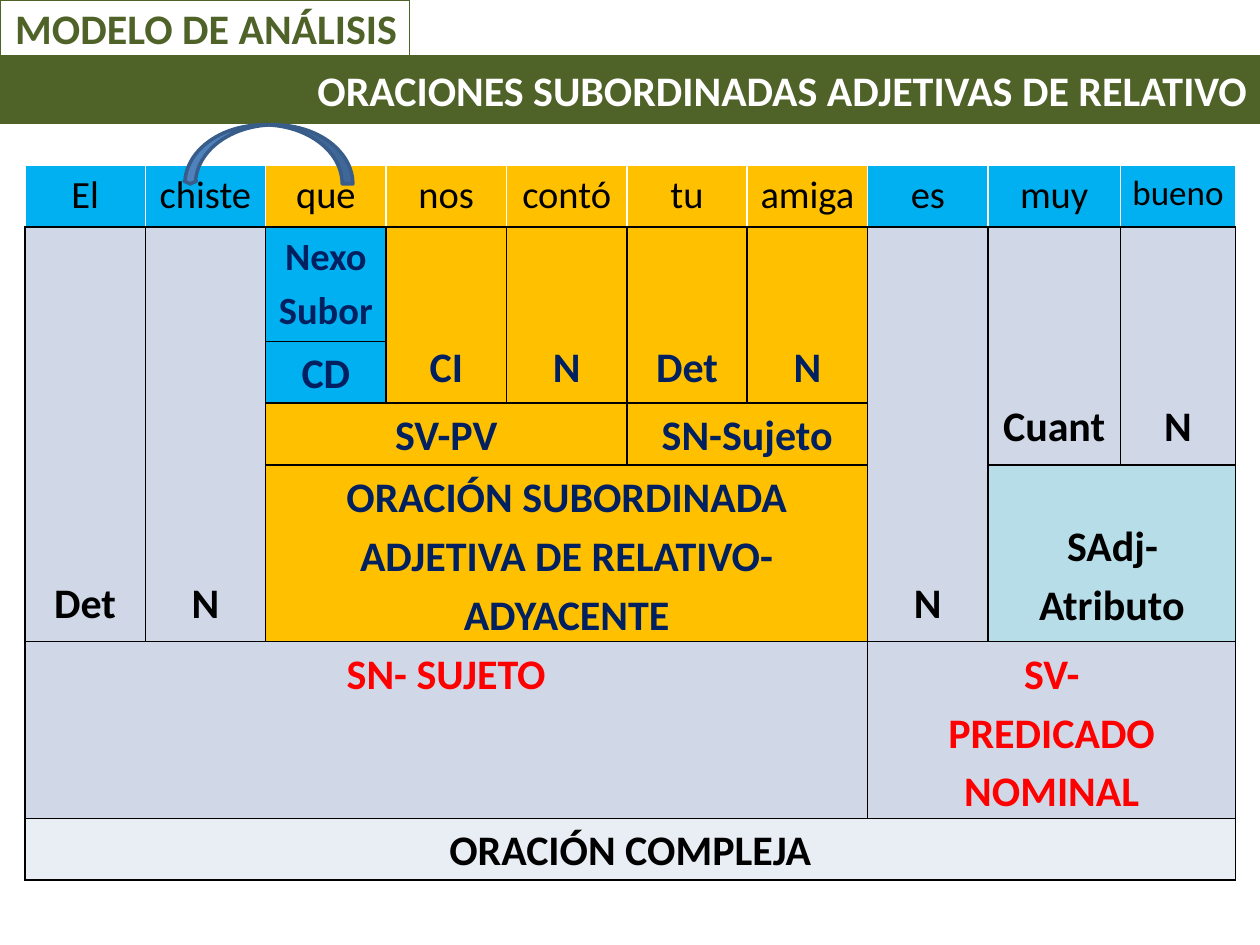
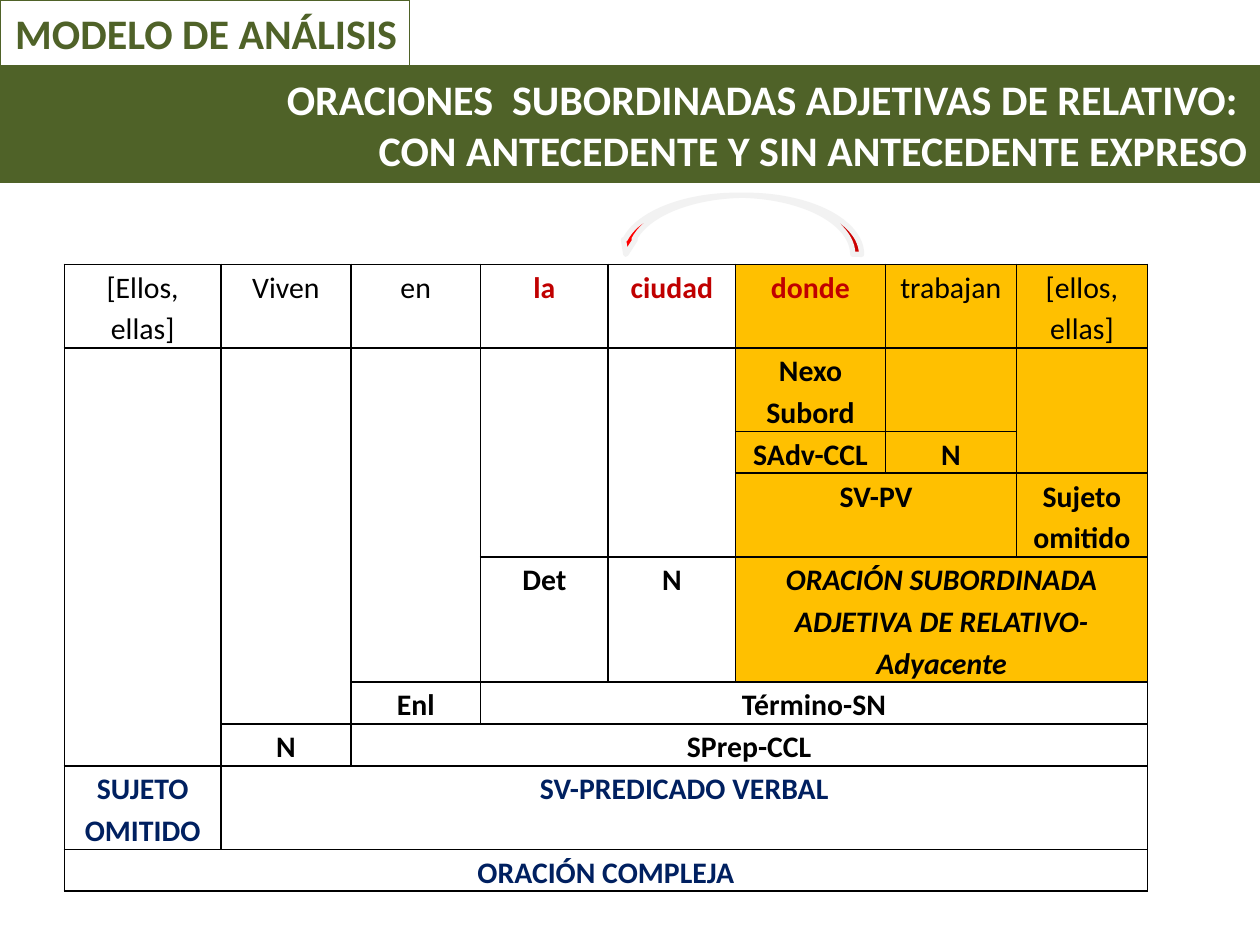
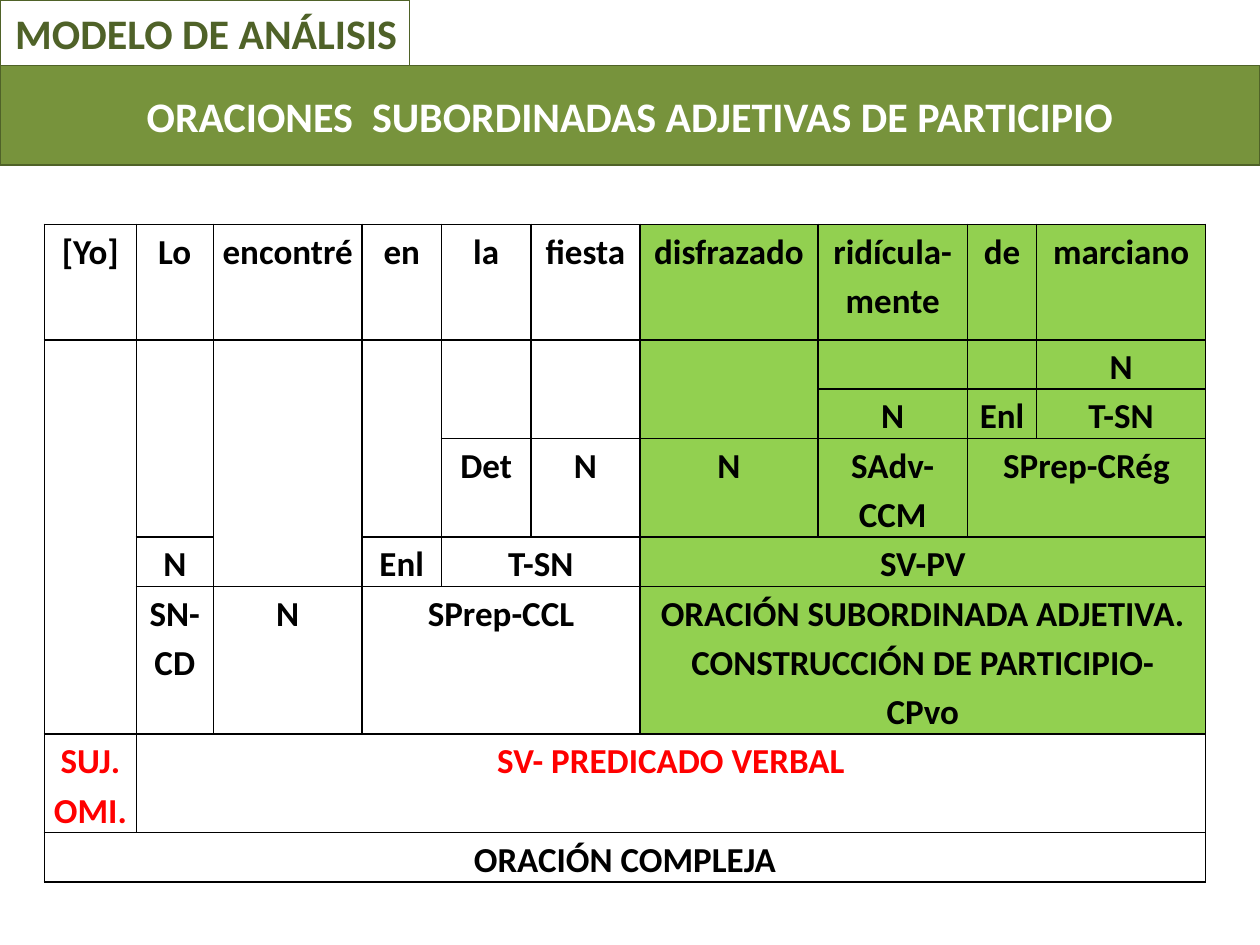
from dataclasses import dataclass
from functools import partial

from lxml.etree import SubElement
from pptx import Presentation
from pptx.dml.color import RGBColor
from pptx.enum.shapes import MSO_SHAPE as Preset
from pptx.enum.text import MSO_ANCHOR as Anchor, MSO_AUTO_SIZE as AutoSize, PP_ALIGN as Align
from pptx.oxml.ns import qn
from pptx.util import Pt

COLORS = {
    "white": "FFFFFF", "black": "000000", "moss": "4F6228", "olive": "77933C",
    "sky": "00B0F0", "amber": "FFC000", "lime": "92D050", "mist": "D0D8E8",
    "pale": "E9EDF4", "aqua": "B7DEE8", "navy": "002060", "red": "FF0000",
    "crimson": "C00000", "blue": "4F81BD", "steel": "385D8A", "silver": "F2F2F2",
}
FONT = "Calibri"
WIDTH, HEIGHT = 720, 540
LABEL_WIDTH = 234


@dataclass
class Cell:
    """One box of an analysis table; cells flow into the next free column."""
    text: str = ""
    across: int = 1
    down: int = 1
    fill: str = ""
    color: str = "black"
    size: float = 0
    bold: bool = True
    italic: bool = False
    drop: float = 0
    edge: str = "black"


def rgb(name):
    return RGBColor.from_string(COLORS[name])


class Deck:
    def __init__(self):
        self.deck = Presentation()
        self.deck.slide_width, self.deck.slide_height = Pt(WIDTH), Pt(HEIGHT)
        self.page = None

    def new_page(self, title, top, height, fill="moss", align=Align.RIGHT):
        """Start a slide with its title band and the label above it."""
        self.page = self.deck.slides.add_slide(self.deck.slide_layouts[5])
        band = self.page.shapes.title
        band.left, band.top, band.width, band.height = Pt(0), Pt(top), Pt(WIDTH), Pt(height)
        self.paint(band, fill, "moss", 0.75)
        self.band_text(band, title, "white", align)
        label = self.shape(Preset.RECTANGLE, 0, 0, LABEL_WIDTH, top, "white", "moss", 0.75)
        self.band_text(label, "MODELO DE ANÁLISIS", "moss", Align.RIGHT)

    def paint(self, shape, fill, line, weight):
        shape.fill.solid()
        shape.fill.fore_color.rgb = rgb(fill)
        shape.line.color.rgb = rgb(line)
        shape.line.width = Pt(weight)

    def shape(self, preset, left, top, width, height, fill, line, weight):
        shape = self.page.shapes.add_shape(preset, Pt(left), Pt(top), Pt(width), Pt(height))
        shape.shadow.inherit = False
        self.paint(shape, fill, line, weight)
        return shape

    def arc(self, preset, left, top, width, height, fill, line, weight, bends):
        arc = self.shape(preset, left, top, width, height, fill, line, weight)
        for index, bend in enumerate(bends):
            arc.adjustments[index] = bend
        return arc

    def band_text(self, shape, text, color, align):
        frame = shape.text_frame
        frame.auto_size = AutoSize.NONE
        frame.word_wrap = True
        frame.vertical_anchor = Anchor.MIDDLE
        frame.margin_left = frame.margin_right = Pt(7.2)
        frame.margin_top = frame.margin_bottom = Pt(3.6)
        self.set_text(frame, text, 24, color, align)

    def set_text(self, frame, text, size, color, align, bold=True, italic=False, spacing=None):
        frame.text = text
        for para in frame.paragraphs:
            para.alignment = align
            para.line_spacing = spacing
            font = para.font
            font.name, font.size, font.bold, font.italic = FONT, Pt(size), bold, italic
            font.color.rgb = rgb(color)

    def table(self, left, top, columns, heights, rows, size, inset):
        frame = self.page.shapes.add_table(
            len(heights), len(columns), Pt(left), Pt(top), Pt(sum(columns)), Pt(sum(heights)))
        table = frame.table
        table.first_row = table.horz_banding = False
        for column, width in zip(table.columns, columns):
            column.width = Pt(width)
        for row, height in zip(table.rows, heights):
            row.height = Pt(height)
        taken = set()
        for r, row in enumerate(rows):
            c = 0
            for cell in row:
                while (r, c) in taken:
                    c += 1
                covered = [(y, x) for y in range(r, r + cell.down)
                           for x in range(c, c + cell.across)]
                taken.update(covered)
                for y, x in covered:
                    text = cell.text if (y, x) == (r, c) else ""
                    self.fill_cell(table.cell(y, x), cell, text, cell.size or size, inset)
                if len(covered) > 1:
                    table.cell(r, c).merge(table.cell(*covered[-1]))

    def fill_cell(self, box, cell, text, size, inset):
        box.margin_left = box.margin_right = Pt(inset)
        box.margin_top, box.margin_bottom = Pt(cell.drop if text else 0), Pt(0)
        if cell.fill:
            box.fill.solid()
            box.fill.fore_color.rgb = rgb(cell.fill)
        else:
            box.fill.background()
        self.set_text(box.text_frame, text, size, cell.color, Align.CENTER,
                      cell.bold, cell.italic, 1.15)
        # Borders come before the fill in the cell properties
        properties = box._tc.get_or_add_tcPr()
        for index, side in enumerate(("lnL", "lnR", "lnT", "lnB")):
            line = SubElement(properties, qn(f"a:{side}"), w=str(Pt(1)))
            color = "black" if side == "lnB" else cell.edge
            SubElement(SubElement(line, qn("a:solidFill")), qn("a:srgbClr"), val=COLORS[color])
            properties.insert(index, line)


def low(lines):
    """Top inset that leaves one 20 pt line and some 24 pt lines free."""
    return 28 + 33.7 * lines


def relative_clause(deck):
    deck.new_page("ORACIONES SUBORDINADAS ADJETIVAS DE RELATIVO", 31.7, 38.9)
    word = partial(Cell, fill="sky", size=22, bold=False, edge="white")
    main_part = partial(Cell, fill="mist")
    clause = partial(Cell, fill="amber", color="navy")
    link = partial(Cell, fill="sky", color="navy")
    rows = [
        [word("El"), word("chiste"),
         *(word(text, fill="amber") for text in ("que", "nos", "contó", "tu", "amiga")),
         word("es"), word("muy"), word("bueno", size=20)],
        [main_part("Det", down=4, drop=low(5)), main_part("N", down=4, drop=low(5)),
         link("Nexo\nSubor", size=22),
         *(clause(text, down=2, drop=low(1)) for text in ("CI", "N", "Det", "N")),
         main_part("N", down=4, drop=low(5)),
         main_part("Cuant", down=3, drop=low(2)), main_part("N", down=3, drop=low(2))],
        [link("CD")],
        [clause("SV-PV", across=3), clause("SN-Sujeto", across=2)],
        [clause("ORACIÓN SUBORDINADA ADJETIVA DE RELATIVO-\nADYACENTE", across=5),
         Cell("SAdj-Atributo", across=2, fill="aqua", drop=low(0))],
        [main_part("SN- SUJETO", across=7, color="red"),
         main_part("SV-\nPREDICADO NOMINAL", across=3, color="red")],
        [Cell("ORACIÓN COMPLEJA", across=10, fill="pale")],
    ]
    deck.table(14.2, 94.5, [68.8] * 8 + [75.6, 66],
               [35.3, 65.3, 35.3, 35.3, 101, 101, 35.3], rows, 24, 5)
    arc = deck.arc(Preset.CURVED_UP_ARROW, 105.1, 71.3, 96.5, 33.8,
                   "blue", "steel", 2, (0.18, 0.21, 0.05))
    arc.rotation = 180


def antecedent(deck):
    deck.new_page("ORACIONES  SUBORDINADAS ADJETIVAS DE RELATIVO: \n"
                  "CON ANTECEDENTE Y SIN ANTECEDENTE EXPRESO", 37.5, 67)
    word = partial(Cell, bold=False)
    key = partial(Cell, color="crimson")
    clause = partial(Cell, fill="amber")
    rows = [
        [word("[Ellos, ellas]"), word("Viven"), word("en"), key("la"), key("ciudad"),
         key("donde", fill="amber"), word("trabajan", fill="amber"),
         word("[ellos, ellas]", fill="amber")],
        [*(Cell(down=down) for down in (6, 5, 4, 3, 3)),
         clause("Nexo\nSubord"), clause(), clause(down=2)],
        [clause("SAdv-CCL"), clause("N")],
        [clause("SV-PV", across=2), clause("Sujeto omitido")],
        [Cell("Det"), Cell("N"),
         clause("ORACIÓN SUBORDINADA ADJETIVA DE RELATIVO-Adyacente", across=3, italic=True)],
        [Cell("Enl"), Cell("Término-SN", across=5)],
        [Cell("N"), Cell("SPrep-CCL", across=6)],
        [Cell("SUJETO OMITIDO", color="navy"),
         Cell("SV-PREDICADO VERBAL", across=7, color="navy")],
        [Cell("ORACIÓN COMPLEJA", across=8, color="navy")],
    ]
    deck.table(36.8, 151, [89.5, 74.2, 74.2, 72.9, 72.9, 85.5, 74.9, 74.9],
               [23.85 * lines for lines in (2, 2, 1, 2, 3, 1, 1, 2, 1)], rows, 17, 4.3)
    arc = deck.arc(Preset.CURVED_DOWN_ARROW, 354.2, 111.6, 138.2, 33.8,
                   "red", "silver", 3, (0.15, 0.2, 0.25))
    arc.element.spPr.xfrm.set("flipH", "1")


def participle(deck):
    deck.new_page("ORACIONES  SUBORDINADAS ADJETIVAS DE PARTICIPIO", 37.5, 56.9,
                  "olive", Align.CENTER)
    clause = partial(Cell, fill="lime")
    rows = [
        [*map(Cell, ("[Yo]", "Lo", "encontré", "en", "la", "fiesta")),
         *map(clause, ("disfrazado", "ridícula-mente", "de", "marciano"))],
        [*(Cell(down=down) for down in (5, 3, 4, 3, 2, 2)),
         clause(down=2), clause(), clause(), clause("N")],
        [clause("N"), clause("Enl"), clause("T-SN")],
        [Cell("Det"), Cell("N"), clause("N"), clause("SAdv-CCM"),
         clause("SPrep-CRég", across=2)],
        [Cell("N"), Cell("Enl"), Cell("T-SN", across=2), clause("SV-PV", across=4)],
        [Cell("SN-CD"), Cell("N"), Cell("SPrep-CCL", across=3),
         clause("ORACIÓN SUBORDINADA ADJETIVA. CONSTRUCCIÓN DE PARTICIPIO-\nCPvo", across=4)],
        [Cell("SUJ.\nOMI.", color="red"),
         Cell("SV- PREDICADO VERBAL", across=9, color="red")],
        [Cell("ORACIÓN COMPLEJA", across=10)],
    ]
    deck.table(25.4, 128.2, [52.5, 44, 85, 45.4, 51.1, 62.4, 101.7, 85.4, 39.6, 96.5],
               [66] + [28.15 * lines for lines in (1, 1, 2, 1, 3, 2, 1)], rows, 20, 4.3)


def main():
    deck = Deck()
    relative_clause(deck)
    antecedent(deck)
    participle(deck)
    deck.deck.save("out.pptx")


if __name__ == "__main__":
    main()
